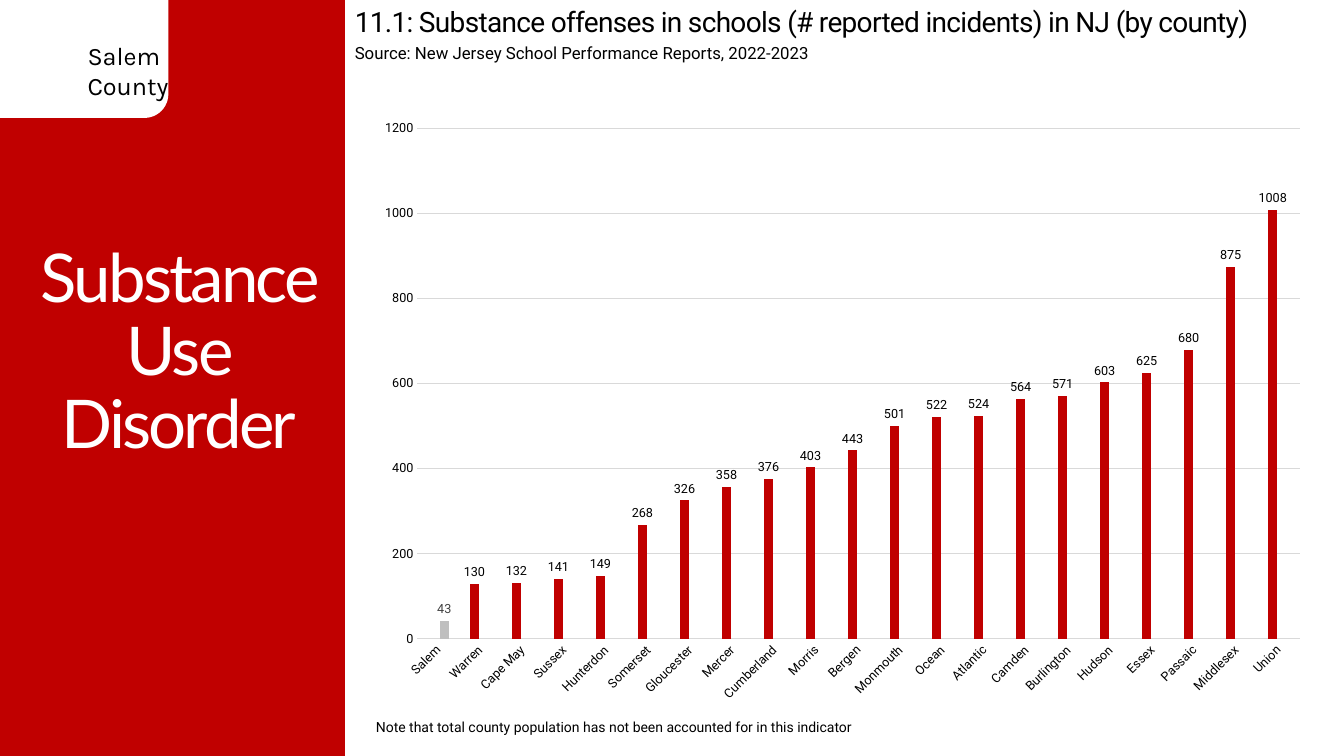
from dataclasses import dataclass

from pptx import Presentation
from pptx.chart.data import CategoryChartData
from pptx.dml.color import RGBColor
from pptx.enum.chart import XL_CHART_TYPE as ChartType
from pptx.enum.chart import XL_LABEL_POSITION as LabelPosition
from pptx.enum.chart import XL_TICK_MARK as TickMark
from pptx.enum.shapes import MSO_SHAPE as Preset
from pptx.enum.text import MSO_ANCHOR as Anchor
from pptx.enum.text import MSO_AUTO_SIZE as AutoSize
from pptx.enum.text import PP_ALIGN as Align
from pptx.util import Emu, Pt

EMU_PER_PX = 9144
RED, WHITE, BLACK = "C00000", "FFFFFF", "000000"
SILVER, GRID_GREY, DARK_GREY = "BFBFBF", "D9D9D9", "404040"

INCIDENTS = {
    "Salem": 43, "Warren": 130, "Cape May": 132, "Sussex": 141,
    "Hunterdon": 149, "Somerset": 268, "Gloucester": 326, "Mercer": 358,
    "Cumberland": 376, "Morris": 403, "Bergen": 443, "Monmouth": 501,
    "Ocean": 522, "Atlantic": 524, "Camden": 564, "Burlington": 571,
    "Hudson": 603, "Essex": 625, "Passaic": 680, "Middlesex": 875,
    "Union": 1008,
}
HOME_COUNTY = "Salem"


@dataclass(frozen=True)
class Box:
    """A position and size in px."""
    left: int
    top: int
    width: int
    height: int

    def emu(self) -> tuple:
        """Return the four lengths in EMU."""
        return tuple(px(n) for n in (self.left, self.top, self.width, self.height))


@dataclass(frozen=True)
class Panel:
    """A filled shape of the sidebar."""
    preset: Preset
    box: Box
    fill: str


@dataclass(frozen=True)
class Caption:
    """A text box with one style."""
    text: str
    box: Box
    size: int
    font: str = "Roboto"
    spacing: int = 0


PANELS = (
    Panel(Preset.RECTANGLE, Box(0, 0, 342, 750), RED),
    Panel(Preset.ROUNDED_RECTANGLE, Box(-33, -25, 200, 142), WHITE),
)
CAPTIONS = (
    Caption("Salem\nCounty", Box(77, 35, 100, 71), 18, "Karla"),
    Caption("11.1: Substance offenses in schools (# reported incidents) in NJ (by county)",
            Box(342, 0, 991, 44), 20, spacing=-50),
    Caption("Source: New Jersey School Performance Reports, 2022-2023",
            Box(342, 37, 919, 30), 12),
    Caption("Note that total county population has not been accounted for in this indicator",
            Box(363, 708, 933, 27), 10),
)
SECTION_BOX = Box(0, 51, 355, 600)
CHART_BOX = Box(363, 108, 945, 600)


def px(length: int) -> Emu:
    """Turn px into EMU."""
    return Emu(length * EMU_PER_PX)


def rgb(colour: str) -> RGBColor:
    """Turn a hex string into a colour."""
    return RGBColor.from_string(colour)


def style_font(font, name: str, size: int, colour: str) -> None:
    """Set typeface, size and colour."""
    font.name, font.size, font.bold = name, Pt(size), False
    font.color.rgb = rgb(colour)


def style_runs(frame, name: str, size: int, colour: str, spacing: int) -> None:
    """Format every run of a text frame."""
    for paragraph in frame.paragraphs:
        for run in paragraph.runs:
            style_font(run.font, name, size, colour)
            if spacing:
                run._r.get_or_add_rPr().set("spc", str(spacing))


def add_panel(slide, panel: Panel) -> None:
    """Draw a plain filled shape."""
    shape = slide.shapes.add_shape(panel.preset, *panel.box.emu())
    shape.shadow.inherit = False
    shape.fill.solid()
    shape.fill.fore_color.rgb = rgb(panel.fill)
    shape.line.fill.background()


def add_caption(slide, caption: Caption) -> None:
    """Draw a text box."""
    frame = slide.shapes.add_textbox(*caption.box.emu()).text_frame
    frame.word_wrap = True
    frame.text = caption.text
    style_runs(frame, caption.font, caption.size, BLACK, caption.spacing)


def place_section_title(slide) -> None:
    """Put the title placeholder on top of the sidebar."""
    title = slide.shapes.title
    title.left, title.top, title.width, title.height = SECTION_BOX.emu()
    frame = title.text_frame
    frame.text = "Substance Use Disorder"
    frame.word_wrap, frame.auto_size = True, AutoSize.NONE
    frame.vertical_anchor = Anchor.MIDDLE
    frame.paragraphs[0].alignment = Align.CENTER
    frame.paragraphs[0].line_spacing = 0.9
    style_runs(frame, "Lato", 48, WHITE, -200)
    slide.shapes._spTree.append(title._element)


def style_axes(chart) -> None:
    """Format both axes and the gridlines."""
    counties, counts = chart.category_axis, chart.value_axis
    for axis in (counties, counts):
        axis.major_tick_mark = axis.minor_tick_mark = TickMark.NONE
        style_font(axis.tick_labels.font, "Roboto", 9, BLACK)
    counties._element.txPr.bodyPr.set("rot", "-2700000")
    counts.minimum_scale, counts.maximum_scale, counts.major_unit = 0, 1200, 200
    counts.format.line.fill.background()
    for line in (counties.format.line, counts.major_gridlines.format.line):
        line.color.rgb = rgb(GRID_GREY)
        line.width = Pt(0.75)


def add_incident_chart(slide) -> None:
    """Draw the columns, with the home county as its own series."""
    incidents = CategoryChartData()
    incidents.categories = list(INCIDENTS)
    for name, is_home in (("Series 1", False), ("Series 2", True)):
        incidents.add_series(name, [
            count if (county == HOME_COUNTY) == is_home else None
            for county, count in INCIDENTS.items()])
    chart = slide.shapes.add_chart(
        ChartType.COLUMN_CLUSTERED, *CHART_BOX.emu(), incidents).chart
    chart.has_legend = chart.has_title = False
    style_font(chart.font, "Calibri", 10, BLACK)
    style_axes(chart)
    plot = chart.plots[0]
    plot.gap_width, plot.overlap, plot.vary_by_categories = 219, -27, False
    for series, fill, ink in zip(plot.series, (RED, SILVER), (BLACK, DARK_GREY)):
        series.format.fill.solid()
        series.format.fill.fore_color.rgb = rgb(fill)
        labels = series.data_labels
        labels.show_value = True
        labels.position = LabelPosition.OUTSIDE_END
        style_font(labels.font, "Roboto", 9, ink)


def main() -> None:
    """Build and save the slide."""
    deck = Presentation()
    deck.slide_width, deck.slide_height = px(1333), px(750)
    slide = deck.slides.add_slide(deck.slide_layouts[5])
    for panel in PANELS:
        add_panel(slide, panel)
    for caption in CAPTIONS:
        add_caption(slide, caption)
    add_incident_chart(slide)
    place_section_title(slide)
    deck.save("out.pptx")


if __name__ == "__main__":
    main()
